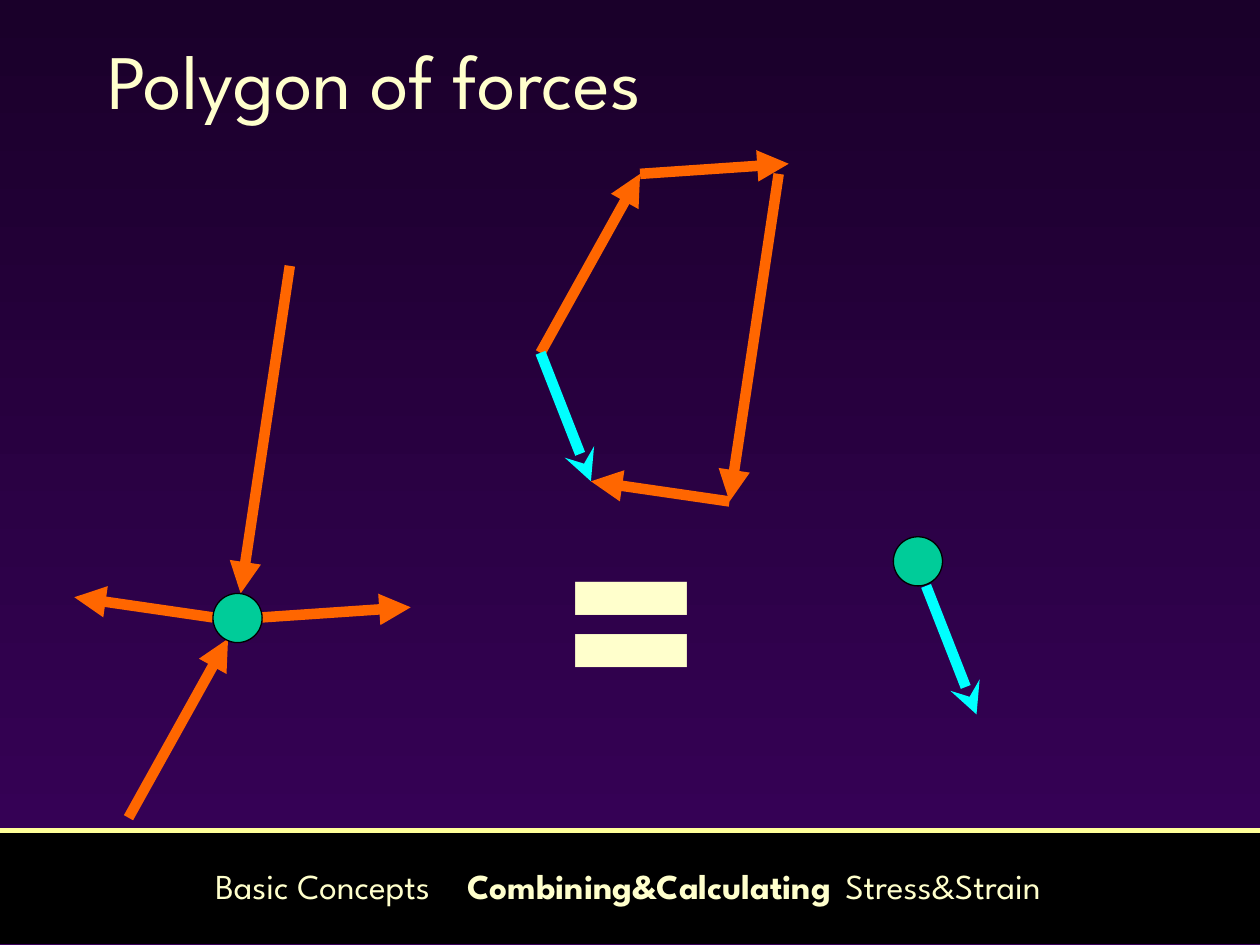
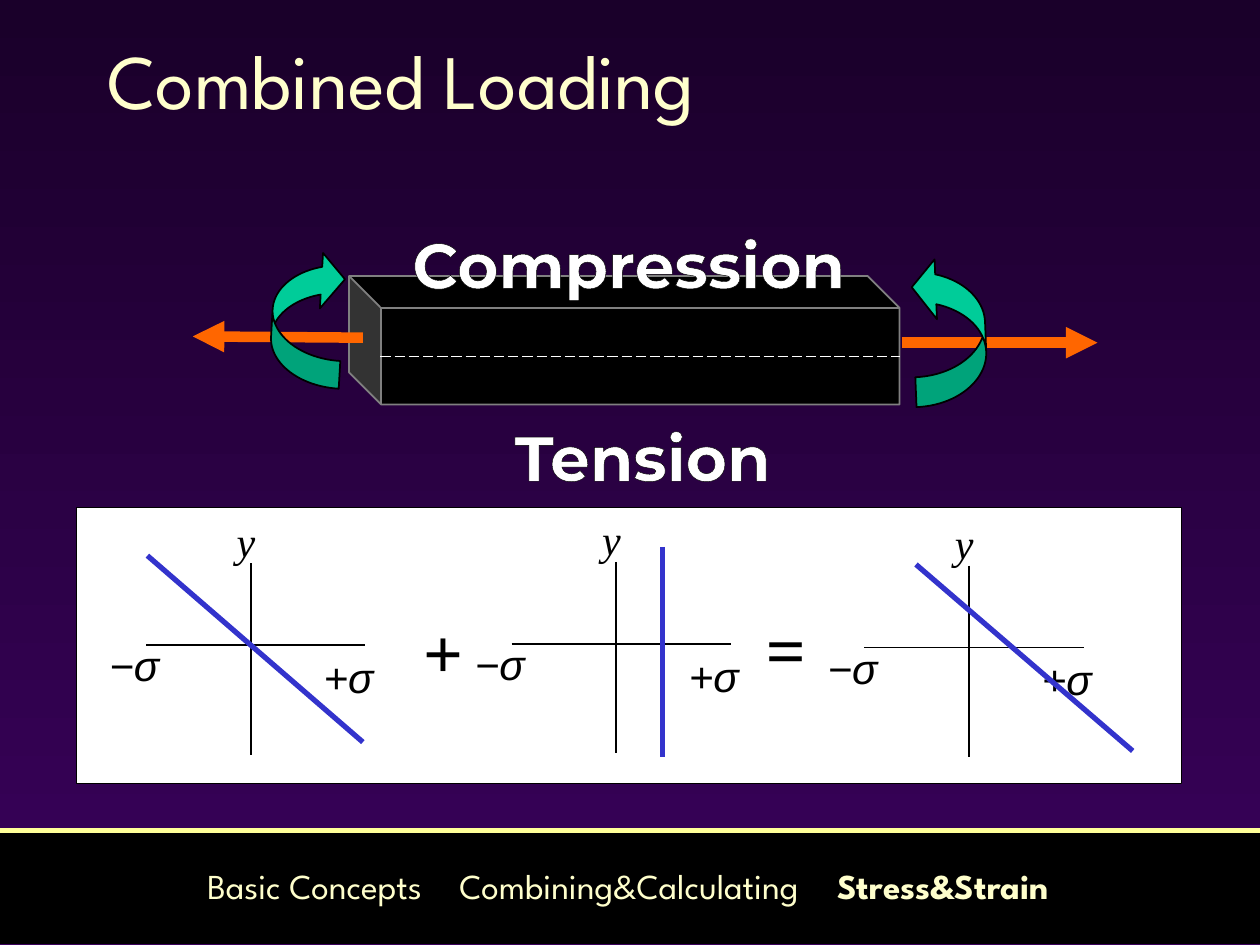
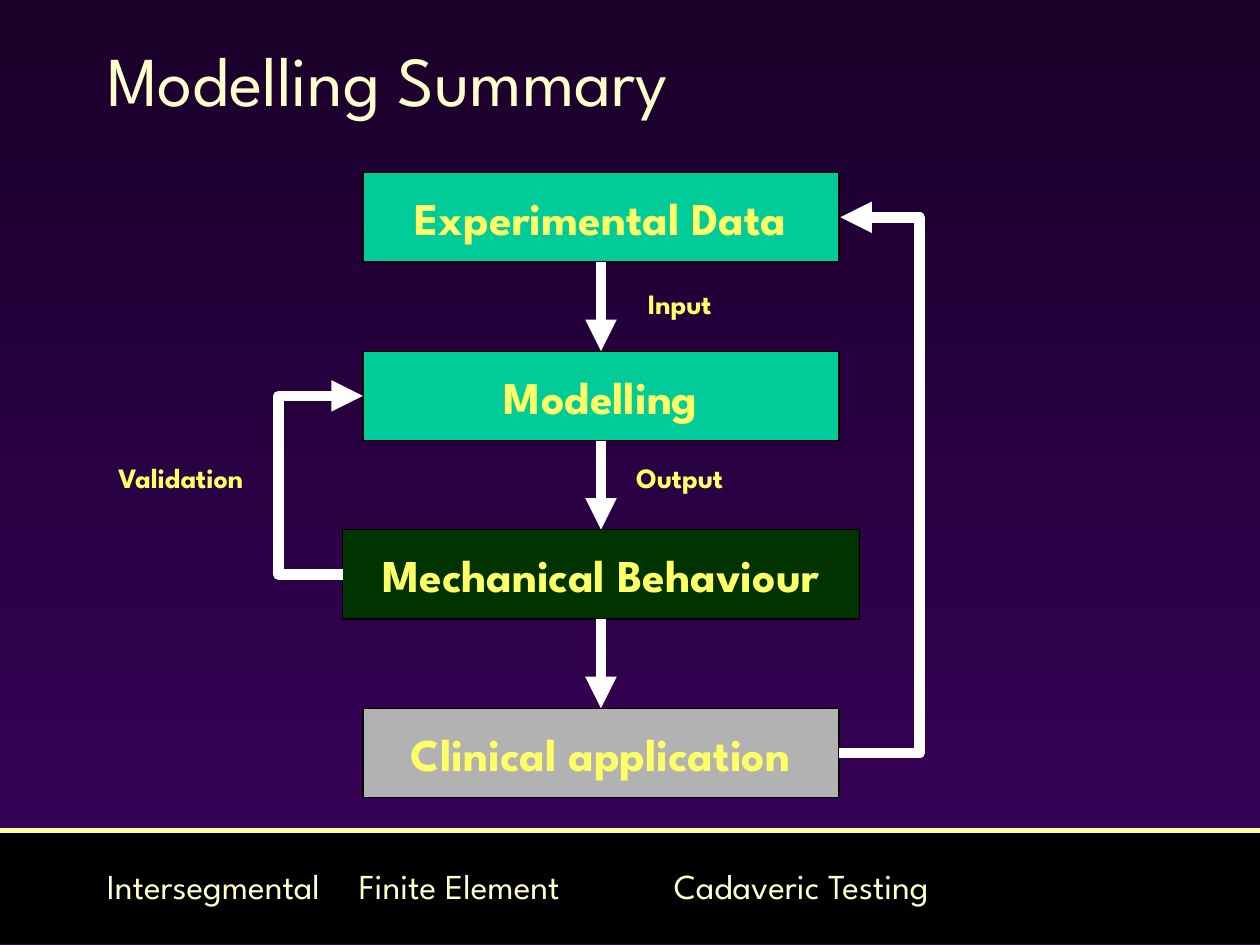
from lxml.etree import SubElement
from pptx import Presentation
from pptx.dml.color import RGBColor
from pptx.enum.dml import MSO_LINE
from pptx.enum.shapes import MSO_CONNECTOR, MSO_SHAPE
from pptx.enum.text import MSO_ANCHOR, MSO_AUTO_SIZE, PP_ALIGN
from pptx.oxml.ns import qn
from pptx.util import Inches, Pt

NIGHT = RGBColor(0x1A, 0x00, 0x2A)
PURPLE = RGBColor(0x39, 0x01, 0x5B)
CREAM = RGBColor(0xFF, 0xFF, 0xCC)
PALE_YELLOW = RGBColor(0xFF, 0xFF, 0x99)
YELLOW = RGBColor(0xFF, 0xFF, 0x66)
ORANGE = RGBColor(0xFF, 0x66, 0x00)
CYAN = RGBColor(0x00, 0xFF, 0xFF)
GREEN = RGBColor(0x00, 0xCC, 0x99)
DARK_GREEN = RGBColor(0x00, 0x33, 0x00)
BLUE = RGBColor(0x33, 0x33, 0xCC)
GRAY = RGBColor(0x80, 0x80, 0x80)
SILVER = RGBColor(0xB2, 0xB2, 0xB2)
BLACK = RGBColor(0, 0, 0)
WHITE = RGBColor(0xFF, 0xFF, 0xFF)

MAIN_FONT = "League Spartan"
SERIF_FONT = "Times New Roman"
SYMBOL_FONT = "Arial"
POSTER_FONT = "Montserrat"
TITLE_ONLY = 5


def inches(*lengths):
    return [Inches(length) for length in lengths]


def set_font(font, name, size, color, bold=False, italic=False):
    font.name, font.size, font.bold, font.italic = name, Pt(size), bold, italic
    font.color.rgb = color


def add_shape(page, kind, box, fill, line=BLACK, width=0.75, adjustments=(), rotation=0):
    shape = page.shapes.add_shape(kind, *inches(*box))
    shape.shadow.inherit = False
    shape.fill.solid()
    shape.fill.fore_color.rgb = fill
    shape.line.color.rgb = line
    shape.line.width = Pt(width)
    shape.rotation = rotation
    for index, value in enumerate(adjustments):
        shape.adjustments[index] = value
    return shape


def add_line(page, start, end, color, width, arrow=None, kind=MSO_CONNECTOR.STRAIGHT):
    line = page.shapes.add_connector(kind, *inches(*start, *end))
    line.line.color.rgb = color
    line.line.width = Pt(width)
    properties = line._element.spPr
    if arrow:
        SubElement(properties.find(qn("a:ln")), qn("a:tailEnd"), type=arrow)
    SubElement(properties, qn("a:effectLst"))
    return line


def add_vector(page, start, vector, color=ORANGE, arrow="triangle"):
    end = [position + change for position, change in zip(start, vector)]
    return add_line(page, start, end, color, 6, arrow)


def add_elbow(page, start, end, elbow_x):
    """Draw an arrow that runs sideways to elbow_x, then up, then back."""
    elbow = add_line(page, start, end, WHITE, 6, "triangle", MSO_CONNECTOR.ELBOW)
    share = (elbow_x - start[0]) / (end[0] - start[0])
    guides = elbow._element.spPr.find(qn("a:prstGeom")).get_or_add_avLst()
    SubElement(guides, qn("a:gd"), name="adj1", fmla=f"val {round(share * 100000)}")


def fill_text(frame, text, font, size, color, bold=False, italic=False,
              align=PP_ALIGN.LEFT, wrap=True, anchor=MSO_ANCHOR.TOP):
    """Write text, a string or (string, bold) spans, as one paragraph."""
    frame.word_wrap = wrap
    frame.auto_size = MSO_AUTO_SIZE.NONE
    frame.vertical_anchor = anchor
    para = frame.paragraphs[0]
    para.alignment = align
    set_font(para.font, font, size, color, bold, italic)
    spans = [(text, None)] if isinstance(text, str) else text
    for words, strong in spans:
        span = para.add_run()
        span.text = words
        if strong is not None:
            span.font.bold = strong
    return para


def add_text(page, box, text, font, size, color, **style):
    frame = page.shapes.add_textbox(*inches(*box)).text_frame
    return fill_text(frame, text, font, size, color, **style)


def outline_text(span, color, width):
    properties = span._r.get_or_add_rPr()
    outline = SubElement(properties, qn("a:ln"), w=str(Pt(width)))
    SubElement(SubElement(outline, qn("a:solidFill")), qn("a:srgbClr"), val=str(color))
    properties.insert(0, outline)


def add_page(deck, title, title_size, footer_box, footer, footer_align=PP_ALIGN.CENTER):
    page = deck.slides.add_slide(deck.slide_layouts[TITLE_ONLY])
    heading = page.shapes.title
    heading.left, heading.top, heading.width, heading.height = inches(0.75, 0, 8.5, 1.25)
    fill_text(heading.text_frame, title, MAIN_FONT, title_size, CREAM, anchor=MSO_ANCHOR.MIDDLE)
    add_shape(page, MSO_SHAPE.RECTANGLE, (0, 6.62, 10, 0.87), BLACK)
    add_line(page, (0, 6.59), (10, 6.59), PALE_YELLOW, 3)
    add_text(page, footer_box, footer, MAIN_FONT, 20, CREAM, align=footer_align)
    return page


def paint_background(deck):
    fill = deck.slide_master.background.fill
    fill.gradient()
    fill.gradient_angle = 270
    for stop, color, position in zip(fill.gradient_stops, (NIGHT, PURPLE), (0, 1)):
        stop.color.rgb = color
        stop.position = position


def add_polygon_page(deck):
    page = add_page(deck, "Polygon of forces", 44, (0.52, 6.81, 8.93, 0.43),
                    [("Basic Concepts\t", False), ("Combining&Calculating", True),
                     ("\tStress&Strain", False)])
    add_text(page, (4.37, 3.46, 2.84, 2.7), "=", MAIN_FONT, 156, CREAM, bold=True)
    # Each force: its vector, its start in the polygon, its start at the joint
    forces = [
        ((0.79, -1.42), (4.29, 2.8), (1.02, 6.49)),
        ((1.18, -0.08), (5.08, 1.38), (2.08, 4.9)),
        ((-0.39, 2.6), (6.18, 1.38), (2.3, 2.11)),
        ((-1.1, -0.16), (5.79, 3.98), (1.69, 4.9)),
    ]
    for vector, *starts in forces:
        for start in starts:
            add_vector(page, start, vector)
    for start in ((4.29, 2.8), (7.35, 4.65)):
        add_vector(page, start, (0.4, 1.02), CYAN, "stealth")
    for left, top in ((1.69, 4.71), (7.09, 4.26)):
        add_shape(page, MSO_SHAPE.OVAL, (left, top, 0.39, 0.39), GREEN)


def add_beam(page, left, top):
    """Draw the loaded beam with its left end and top edge at left, top."""
    length, height = 4.37, 1.02
    cube_box = (left + (length - height) / 2, top - (length - height) / 2, height, length)
    add_shape(page, MSO_SHAPE.CUBE, cube_box, BLACK, GRAY, 1, (0.25,), 270)
    add_vector(page, (left + 0.11, top + 0.49), (-1.35, -0.01))
    add_vector(page, (left + 4.39, top + 0.53), (1.55, 0))
    add_shape(page, MSO_SHAPE.CURVED_RIGHT_ARROW, (left + 4.48, top - 0.16, 0.57, 1.19),
              GREEN, BLACK, 1, (0.417, 0.834, 0.333), 177.7)
    add_shape(page, MSO_SHAPE.CURVED_LEFT_ARROW, (left - 0.61, top - 0.21, 0.56, 1.09),
              GREEN, BLACK, 1, (0.394, 0.787, 0.333), 183.3)
    for word, offset, width, rise in (("Compression", 0.73, 2.98, -0.45),
                                      ("Tension", 1.36, 1.94, 1.08)):
        para = add_text(page, (left + offset, top + rise, width, 0.39), word, POSTER_FONT, 36,
                        WHITE, bold=True, align=PP_ALIGN.CENTER, wrap=False)
        outline_text(para.runs[0], BLACK, 0.75)
    axis = add_line(page, (left + 0.25, top + 0.64), (left + length, top + 0.64), WHITE, 0.75)
    axis.line.dash_style = MSO_LINE.LONG_DASH


def add_stress_graph(page, origin, start, end):
    """Draw axes at origin and a stress line between two points relative to it."""
    x, y = origin
    add_line(page, (x, y - 0.65), (x, y + 0.87), BLACK, 1)
    add_line(page, (x - 0.83, y), (x + 0.91, y), BLACK, 1)
    for text, font, across, down, width in (("+σ", SYMBOL_FONT, 0.48, 0, 0.7),
                                            ("y", SERIF_FONT, -0.21, -1.08, 0.43),
                                            ("−σ", SYMBOL_FONT, -1.22, -0.09, 0.7)):
        add_text(page, (x + across, y + down, width, 0.5), text, font, 24, BLACK, italic=True)
    add_line(page, (x + start[0], y + start[1]), (x + end[0], y + end[1]), BLUE, 3)


def add_loading_page(deck):
    page = add_page(deck, "Combined Loading", 44, (0.52, 6.81, 8.93, 0.43),
                    [("Basic Concepts\tCombining&Calculating\t", False),
                     ("Stress&Strain", True)])
    add_shape(page, MSO_SHAPE.RECTANGLE, (0.61, 4.03, 8.77, 2.19), WHITE)
    add_beam(page, 2.77, 2.19)
    add_stress_graph(page, (1.99, 5.12), (-0.82, -0.71), (0.89, 0.77))
    add_stress_graph(page, (4.89, 5.11), (0.37, -0.77), (0.37, 0.9))
    add_stress_graph(page, (7.69, 5.14), (-0.42, -0.66), (1.3, 0.82))
    for sign, left, top in (("+", 3.26, 4.78), ("=", 5.98, 4.76)):
        add_text(page, (left, top, 0.7, 0.77), sign, SERIF_FONT, 40, BLACK, bold=True)


def add_flowchart(page, center, top):
    """Stack the steps below top, centred on center, and join them."""
    height, pitch = 0.71, 1.417
    steps = [("Experimental Data", 3.78, GREEN), ("Modelling", 3.78, GREEN),
             ("Mechanical Behaviour", 4.1, DARK_GREEN), ("Clinical application", 3.78, SILVER)]
    middles = [top + height / 2 + index * pitch for index in range(len(steps))]
    boxes = []
    for (name, width, fill), middle in zip(steps, middles):
        box = add_shape(page, MSO_SHAPE.RECTANGLE,
                        (center - width / 2, middle - height / 2, width, height), fill)
        fill_text(box.text_frame, name, MAIN_FONT, 26, YELLOW, bold=True,
                  align=PP_ALIGN.CENTER, wrap=False, anchor=MSO_ANCHOR.MIDDLE)
        boxes.append(box)
    for upper, lower in zip(boxes, boxes[1:]):
        arrow = add_line(page, (center, top), (center, top + pitch), WHITE, 6, "triangle")
        arrow.begin_connect(upper, 2)
        arrow.end_connect(lower, 0)
    add_elbow(page, (center - 2.05, middles[2]), (center - 1.89, middles[1]), center - 2.56)
    add_elbow(page, (center + 1.89, middles[3]), (center + 1.9, middles[0]), center + 2.54)
    for name, offset, drop, width in (("Input", 0.19, 0.92, 0.87), ("Output", 0.19, 2.3, 0.87),
                                      ("Validation", -3.85, 2.3, 1.03)):
        add_text(page, (center + offset, top + drop, width, 0.24), name, MAIN_FONT, 16, YELLOW,
                 bold=True, align=PP_ALIGN.CENTER, wrap=False, anchor=MSO_ANCHOR.MIDDLE)


def add_summary_page(deck):
    page = add_page(deck, "Modelling Summary", 40, (0.75, 6.81, 8.91, 0.43),
                    "Intersegmental\tFinite Element\t\tCadaveric Testing", PP_ALIGN.LEFT)
    add_flowchart(page, 4.77, 1.37)


def main():
    deck = Presentation()
    deck.slide_width, deck.slide_height = inches(10, 7.5)
    paint_background(deck)
    add_polygon_page(deck)
    add_loading_page(deck)
    add_summary_page(deck)
    deck.save("out.pptx")


if __name__ == "__main__":
    main()
